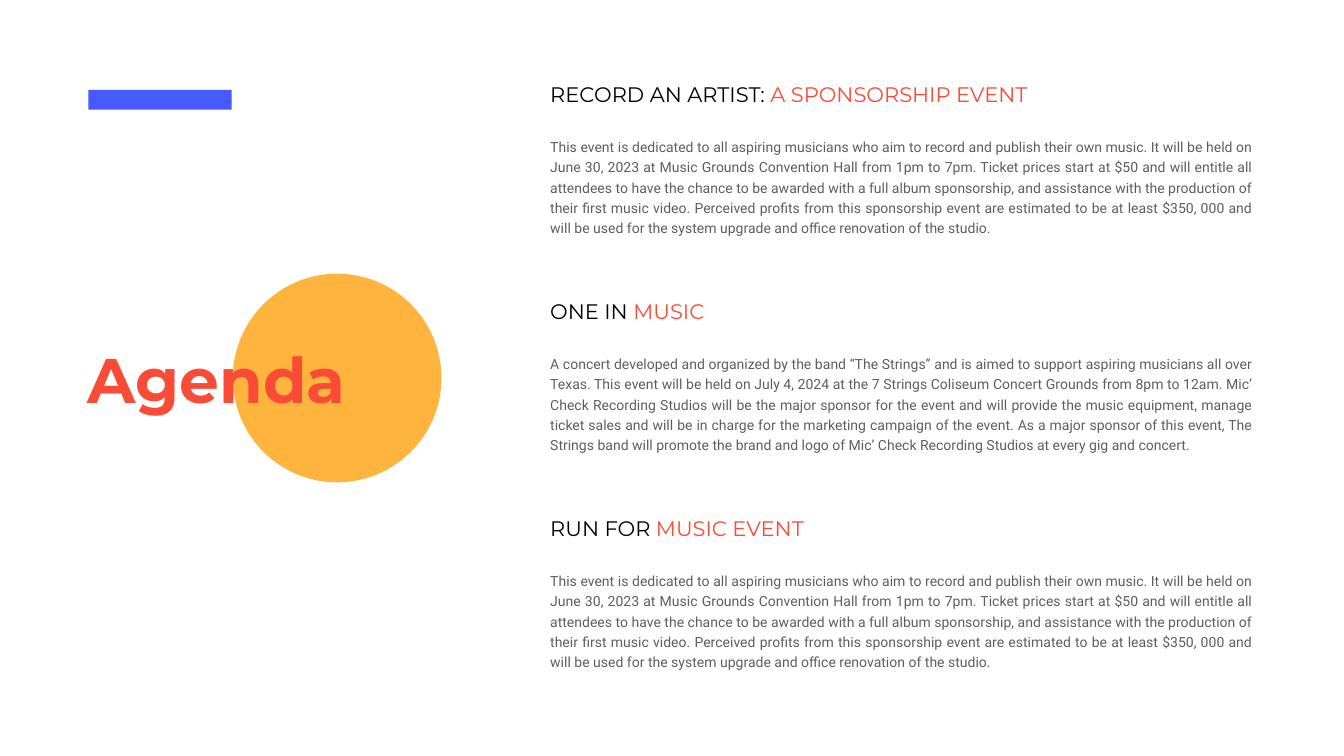
"""Build the agenda slide with three event descriptions."""
from pptx import Presentation
from pptx.dml.color import RGBColor
from pptx.enum.shapes import MSO_SHAPE as Preset
from pptx.enum.text import MSO_ANCHOR as Anchor, PP_ALIGN as Align
from pptx.util import Pt

BLUE = RGBColor(0x46, 0x5A, 0xFF)
AMBER = RGBColor(0xFF, 0xB4, 0x3E)
CORAL = RGBColor(0xF9, 0x4B, 0x35)
BLACK = RGBColor(0, 0, 0)
GRAY = RGBColor(0x5E, 0x5E, 0x5E)

RECORDING = (
    "This event is dedicated to all aspiring musicians who aim to record and publish "
    "their own music. It will be held on June 30, 2023 at Music Grounds Convention Hall "
    "from 1pm to 7pm. Ticket prices start at $50 and will entitle all attendees to have "
    "the chance to be awarded with a full album sponsorship, and assistance with the "
    "production of their first music video. Perceived profits from this sponsorship event "
    "are estimated to be at least $350, 000 and will be used for the system upgrade and "
    "office renovation of the studio."
)
CONCERT = (
    "A concert developed and organized by the band “The Strings” and is aimed to support "
    "aspiring musicians all over Texas. This event will be held on July 4, 2024 at the "
    "7 Strings Coliseum Concert Grounds from 8pm to 12am. Mic’ Check Recording Studios "
    "will be the major sponsor for the event and will provide the music equipment, manage "
    "ticket sales and will be in charge for the marketing campaign of the event. As a major "
    "sponsor of this event, The Strings band will promote the brand and logo of Mic’ Check "
    "Recording Studios at every gig and concert."
)
EVENTS = [
    ("RECORD AN ARTIST: ", "A SPONSORSHIP EVENT", RECORDING),
    ("ONE IN ", "MUSIC", CONCERT),
    ("RUN FOR ", "MUSIC EVENT", RECORDING),
]
EVENT_LEFT = 782
EVENT_TOP = 116
EVENT_PITCH = 310


def set_frame(frame, inset):
    frame.word_wrap = True
    frame.vertical_anchor = Anchor.MIDDLE
    frame.margin_left = frame.margin_right = Pt(inset)
    frame.margin_top = frame.margin_bottom = Pt(inset)
    return frame.paragraphs[0]


def add_run(paragraph, text, face, size, color, bold=False):
    run = paragraph.add_run()
    run.text = text
    run.font.name = face
    run.font.size = Pt(size)
    run.font.color.rgb = color
    run.font.bold = bold


prs = Presentation()
prs.slide_width, prs.slide_height = Pt(1920), Pt(1080)
slide = prs.slides.add_slide(prs.slide_layouts[5])
shapes = slide.shapes

agenda = shapes.title
agenda.left, agenda.top, agenda.width, agenda.height = Pt(125.3), Pt(485.3), Pt(377), Pt(110)
heading = set_frame(agenda.text_frame, 0)
heading.alignment = Align.LEFT
add_run(heading, "Agenda", "Montserrat", 90, CORAL, bold=True)

for preset, left, top, width, height, color in [
    (Preset.OVAL, 332.6, 391, 298, 298, AMBER),
    (Preset.RECTANGLE, 126.4, 128.5, 204.5, 28, BLUE),
]:
    accent = shapes.add_shape(preset, Pt(left), Pt(top), Pt(width), Pt(height))
    accent.shadow.inherit = False
    accent.fill.solid()
    accent.fill.fore_color.rgb = color
    accent.line.fill.background()
    agenda.element.addprevious(accent.element)

for index, (lead, highlight, description) in enumerate(EVENTS):
    top = EVENT_TOP + index * EVENT_PITCH

    event_name = shapes.add_textbox(Pt(EVENT_LEFT), Pt(top), Pt(785), Pt(45))
    name_line = set_frame(event_name.text_frame, 4)
    name_line.line_spacing = 0.7
    add_run(name_line, lead, "Montserrat", 30, BLACK)
    add_run(name_line, highlight, "Montserrat", 30, CORAL)

    event_details = shapes.add_textbox(Pt(EVENT_LEFT), Pt(top + 76), Pt(1011.6), Pt(147))
    details = set_frame(event_details.text_frame, 4)
    details.alignment = Align.JUSTIFY
    details.line_spacing = 1.2
    add_run(details, description, "Roboto", 20, GRAY)

prs.save("out.pptx")
